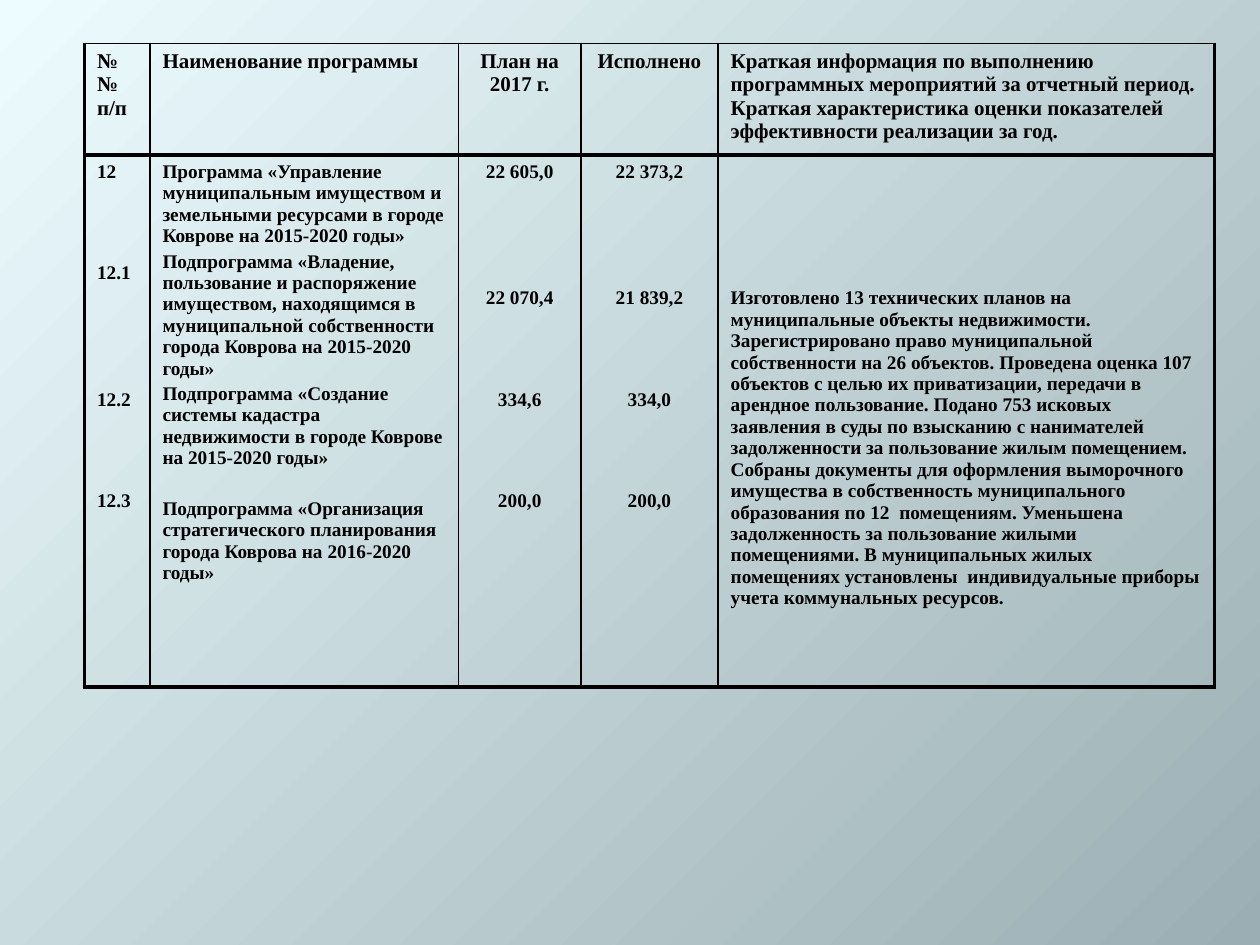
from dataclasses import dataclass

from lxml import etree
from pptx import Presentation, util as u
from pptx.dml.color import RGBColor
from pptx.enum import text
from pptx.oxml.ns import qn


@dataclass(frozen=True)
class Theme:
    font: str = "Times New Roman"
    ink: str = "000000"
    light: str = "EDFCFF"
    dark: str = "9BAEB3"
    header_size: float = 12
    body_size: float = 11
    line_height: float = 12.25  # one line of body text, points
    gap: float = 2.2            # normal space before a paragraph, points
    thin: float = 1
    thick: float = 2.25

    def space(self, steps):
        """Space that puts a paragraph the given number of lines lower."""
        return self.gap + (steps - 1) * (self.line_height + self.gap)


class SlideBuilder:
    def __init__(self, presentation, theme):
        self.theme = theme
        self.width = presentation.slide_width
        self.height = presentation.slide_height
        self.slide = presentation.slides.add_slide(presentation.slide_layouts[6])

    def across(self, percent):
        return int(self.width * percent / 100)

    def down(self, percent):
        return int(self.height * percent / 100)

    def background(self):
        """Gradient that spreads from the top left corner."""
        fill = self.slide.background.fill
        fill.gradient()
        colors = (self.theme.light, self.theme.dark)
        for stop, color, position in zip(fill.gradient_stops, colors, (0, 1)):
            stop.color.rgb = RGBColor.from_string(color)
            stop.position = position
        linear = self.slide.element.find(".//" + qn("a:lin"))
        gradient = linear.getparent()
        gradient.remove(linear)
        circle = etree.SubElement(gradient, qn("a:path"), {"path": "circle"})
        etree.SubElement(circle, qn("a:fillToRect"), {"r": "100000", "b": "100000"})

    def table(self, left, top, columns, rows):
        shape = self.slide.shapes.add_table(
            len(rows), len(columns), self.across(left), self.down(top),
            self.across(sum(columns)), self.down(sum(rows)))
        table = shape.table
        table.first_row = table.horz_banding = False
        for column, width in zip(table.columns, columns):
            column.width = self.across(width)
        for row, height in zip(table.rows, rows):
            row.height = self.down(height)
        last = len(columns) - 1
        for r in range(len(rows)):
            for c in range(len(columns)):
                cell = table.cell(r, c)
                self.borders(cell, left=c == 0, right=c == last, top=r > 0, bottom=True)
                cell.fill.background()
        return table

    def borders(self, cell, **thick_sides):
        properties = cell._tc.get_or_add_tcPr()
        for side, tag in (("left", "a:lnL"), ("right", "a:lnR"),
                          ("top", "a:lnT"), ("bottom", "a:lnB")):
            width = self.theme.thick if thick_sides[side] else self.theme.thin
            line = etree.SubElement(properties, qn(tag), {"w": str(u.Pt(width))})
            fill = etree.SubElement(line, qn("a:solidFill"))
            etree.SubElement(fill, qn("a:srgbClr"), {"val": self.theme.ink})

    def cell_text(self, cell, lines, size, centered=False, skip=0):
        """Fill a cell; each line is (text, steps below the line before)."""
        if skip:
            step = self.theme.line_height + self.theme.gap
            cell.margin_top = u.Inches(0.05) + u.Pt(skip * step)
        frame = cell.text_frame
        for index, (words, steps) in enumerate(lines):
            paragraph = frame.add_paragraph() if index else frame.paragraphs[0]
            paragraph.alignment = text.PP_ALIGN.CENTER if centered else text.PP_ALIGN.LEFT
            if index:
                paragraph.space_before = u.Pt(self.theme.space(steps))
            run = paragraph.add_run()
            run.text = words
            run.font.name = self.theme.font
            run.font.size = u.Pt(size)
            run.font.bold = True
            run.font.color.rgb = RGBColor.from_string(self.theme.ink)


HEADERS = (
    "№№ п/п",
    "Наименование программы",
    "План на 2017 г.",
    "Исполнено",
    "Краткая информация по выполнению программных мероприятий за отчетный период. "
    "Краткая характеристика оценки показателей эффективности реализации за год.",
)
NUMBERS = ("12", "12.1", "12.2", "12.3")
PROGRAMS = (
    "Программа «Управление муниципальным имуществом и земельными ресурсами "
    "в городе Коврове на 2015-2020 годы»",
    "Подпрограмма «Владение, пользование и распоряжение имуществом, находящимся "
    "в муниципальной собственности города Коврова на 2015-2020 годы»",
    "Подпрограмма «Создание системы кадастра недвижимости в городе Коврове "
    "на 2015-2020 годы»",
    "Подпрограмма «Организация стратегического планирования города Коврова "
    "на 2016-2020 годы»",
)
PLANNED = ("22 605,0", "22 070,4", "334,6", "200,0")
SPENT = ("22 373,2", "21 839,2", "334,0", "200,0")
RESULTS = (
    "Изготовлено 13 технических планов на муниципальные объекты недвижимости. "
    "Зарегистрировано право муниципальной собственности на 26 объектов. "
    "Проведена оценка 107 объектов с целью их приватизации, передачи в арендное "
    "пользование. Подано 753 исковых заявления в суды по взысканию с нанимателей "
    "задолженности за пользование жилым помещением. Собраны документы для оформления "
    "выморочного имущества в собственность муниципального образования по 12  помещениям. "
    "Уменьшена задолженность за пользование жилыми помещениями. В муниципальных жилых "
    "помещениях установлены  индивидуальные приборы учета коммунальных ресурсов.",
)
# Per column: paragraphs, steps between them, centred, lines skipped at the top
BODY = (
    (NUMBERS, (0, 4, 5, 4), False, 0),
    (PROGRAMS, (0, 1, 1, 2), False, 0),
    (PLANNED, (0, 5, 4, 4), True, 0),
    (SPENT, (0, 5, 4, 4), True, 0),
    (RESULTS, (0,), False, 5),
)


def main():
    presentation = Presentation()
    presentation.slide_width = u.Inches(10)
    presentation.slide_height = u.Inches(7.5)
    theme = Theme()
    builder = SlideBuilder(presentation, theme)
    builder.background()

    # Programme table, in percent of the slide
    table = builder.table(left=6.7, top=4.6, columns=(5.2, 24.5, 9.7, 10.9, 39.4),
                          rows=(11.8, 56.3))
    for index, (header, column) in enumerate(zip(HEADERS, BODY)):
        words, steps, centered, skip = column
        builder.cell_text(table.cell(0, index), [(header, 0)], theme.header_size, centered)
        builder.cell_text(table.cell(1, index), zip(words, steps), theme.body_size,
                          centered, skip)

    presentation.save("out.pptx")


if __name__ == "__main__":
    main()
